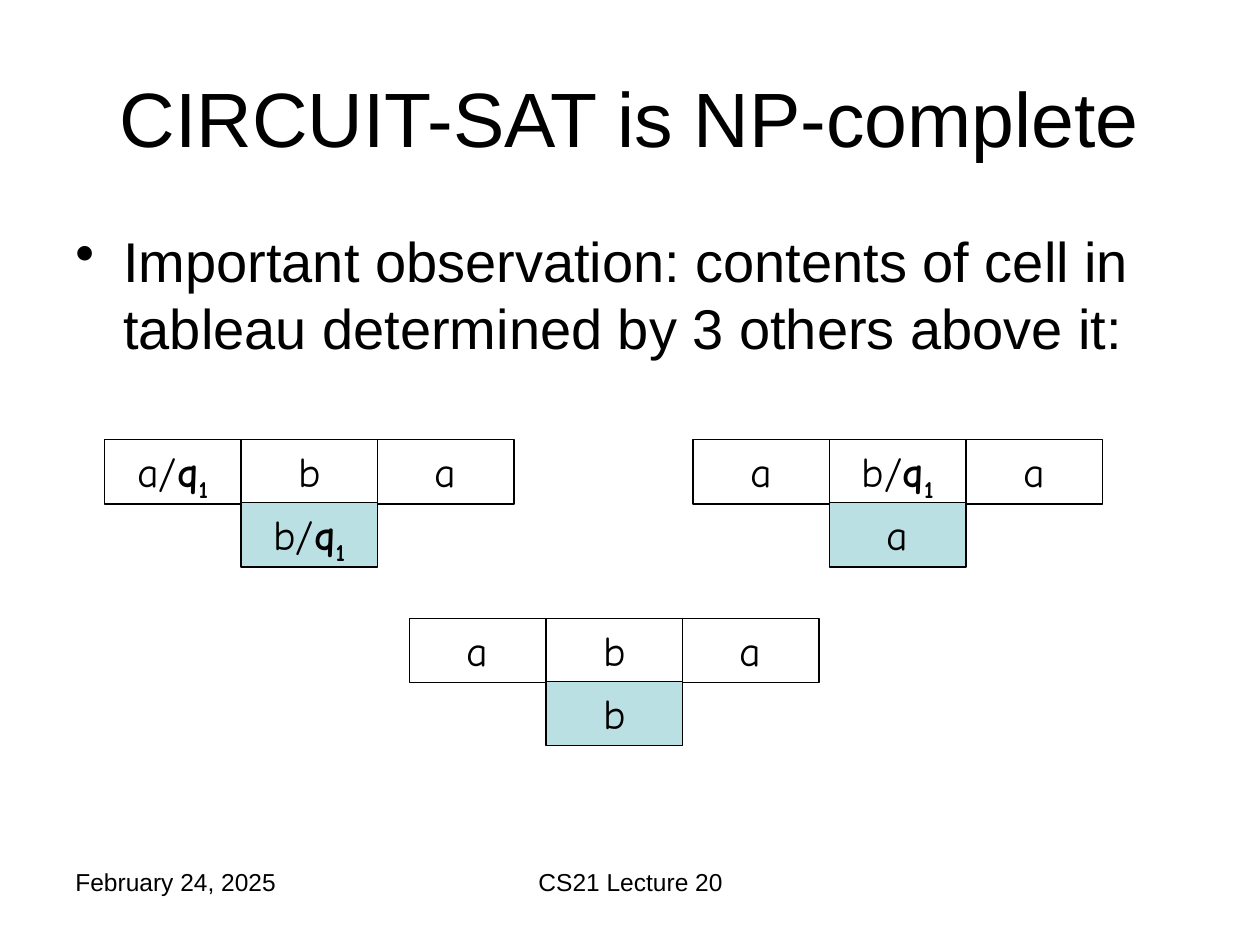
"""Build the slide on CIRCUIT-SAT with three groups of tableau cells."""
from pptx import Presentation
from pptx.dml.color import RGBColor
from pptx.enum import shapes, text
from pptx.oxml import xmlchemy as xml
from pptx.util import Inches, Pt

BLACK = RGBColor(0x00, 0x00, 0x00)
TEAL = RGBColor(0xBB, 0xE0, 0xE3)
LEFT, MID = text.PP_ALIGN.LEFT, text.PP_ALIGN.CENTER
TOP, CENTER = text.MSO_ANCHOR.TOP, text.MSO_ANCHOR.MIDDLE


def write(shape, words, size=14, font="Arial", align=MID, anchor=TOP, gap=0):
    """Fill a shape; bars split plain text, a bold part and its subscript."""
    frame = shape.text_frame
    frame.word_wrap = True
    frame.vertical_anchor = anchor
    para = frame.paragraphs[0]
    para.alignment = align
    para.space_before = Pt(gap)
    for i, part in enumerate(words.split("|")):
        run = para.add_run()
        run.text = part
        run.font.size = Pt(size)
        run.font.name = font
        run.font.color.rgb = BLACK
        run.font.bold = i > 0
        if i == 2:
            run.font._element.set("baseline", "-25000")
    return para


prs = Presentation()
prs.slide_width, prs.slide_height = Inches(10), Inches(7.5)
slide = prs.slides.add_slide(prs.slide_layouts[6])


def box(x, y, w, h):
    """Add an empty text box, in inches."""
    return slide.shapes.add_textbox(Inches(x), Inches(y), Inches(w), Inches(h))


write(box(0.5, 6.83, 2.33, 0.52), "February 24, 2025", align=LEFT)
write(box(3.42, 6.83, 3.17, 0.52), "CS21 Lecture 20")
write(box(0.5, 0.3, 9, 1.25), "CIRCUIT-SAT is NP-complete", size=44, anchor=CENTER)
body = write(
    box(0.5, 1.75, 9, 1.25),
    "Important observation: contents of cell in tableau determined by 3 others above it:",
    size=32, align=LEFT, gap=6.4,
)
props = body._p.get_or_add_pPr()
props.set("marL", str(Inches(0.38)))
props.set("indent", str(Inches(-0.38)))
mark = xml.OxmlElement("a:buChar")
mark.set("char", "•")
props.append(mark)

WIDE, HIGH, STEP = 13 / 12, 0.51, 0.5
groups = [
    (0.83, 3.49, ["a/|q|1", "b", "a"], "b/|q|1"),
    (5.5, 3.49, ["a", "b/|q|1", "a"], "a"),
    (3.25, 4.91, ["a", "b", "a"], "b"),
]
for x, y, row, below in groups:
    cells = [(i, 0, words) for i, words in enumerate(row)] + [(1, 1, below)]
    for col, line, words in cells:
        cell = slide.shapes.add_shape(
            shapes.MSO_SHAPE.RECTANGLE,
            Inches(x + col * WIDE), Inches(y + line * STEP), Inches(WIDE), Inches(HIGH),
        )
        cell.shadow.inherit = False
        cell.line.color.rgb = BLACK
        cell.line.width = Pt(0.75)
        if line:
            cell.fill.solid()
            cell.fill.fore_color.rgb = TEAL
        else:
            cell.fill.background()
        write(cell, words, size=24, font="Comic Neue")
        cell.text_frame.auto_size = text.MSO_AUTO_SIZE.SHAPE_TO_FIT_TEXT

prs.save("out.pptx")
